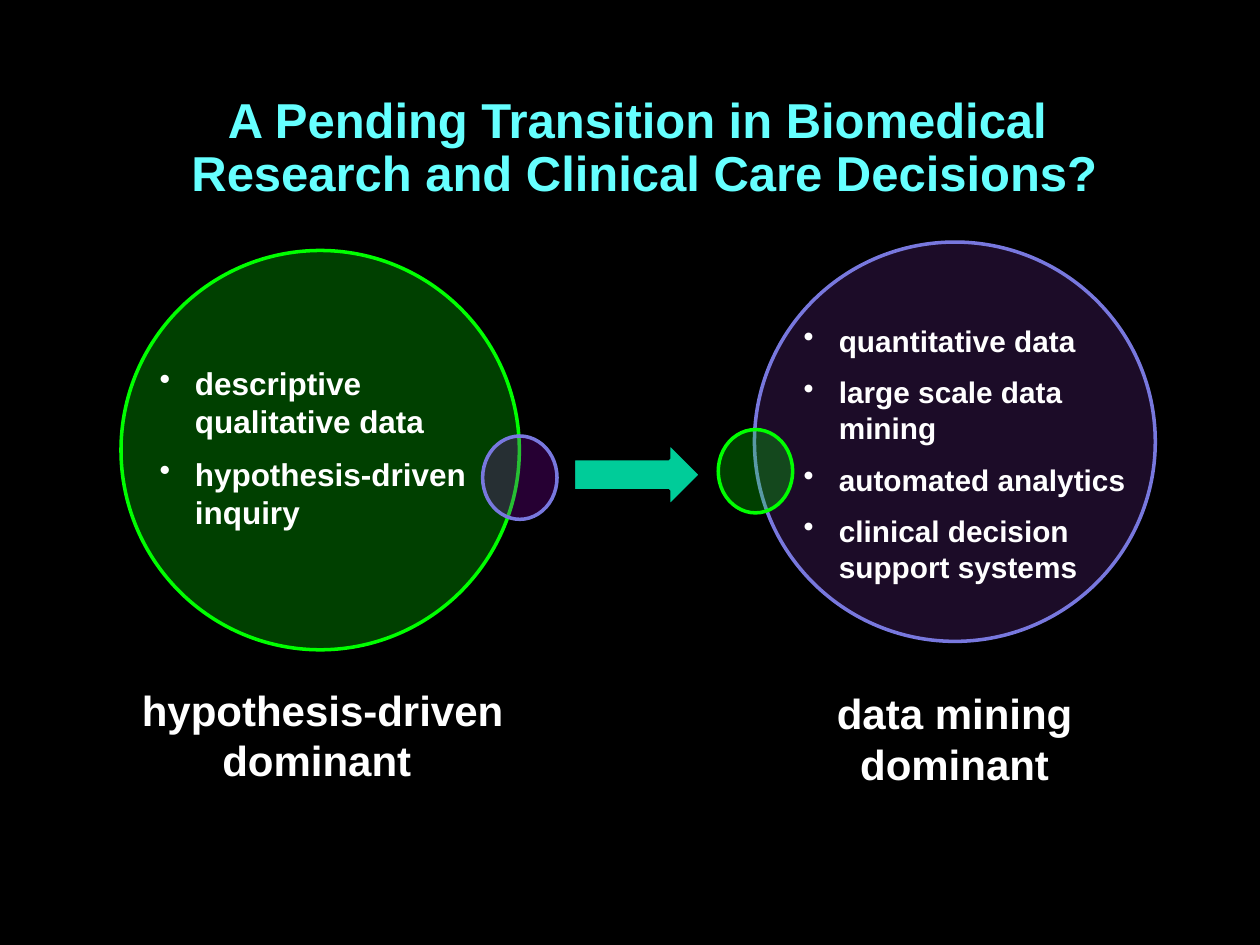
import lxml.etree
import pptx
import pptx.dml.color
import pptx.enum.shapes
import pptx.enum.text
import pptx.oxml.ns
import pptx.util

Cm = pptx.util.Cm
Pt = pptx.util.Pt
SHAPES = pptx.enum.shapes.MSO_SHAPE
CENTER = pptx.enum.text.PP_ALIGN.CENTER

GREEN = "00FF00"
LAVENDER = "7878DE"
WHITE = "FFFFFF"


def rgb(value):
    return pptx.dml.color.RGBColor.from_string(value)


def shift(box, offset):
    left, top, width, height = offset
    return box[0] + left, box[1] + top, width, height


def set_font(para, size, color):
    para.font.name = "Arial"
    para.font.size = Pt(size)
    para.font.bold = True
    para.font.color.rgb = rgb(color)


def add_figure(page, kind, box, fill, line, opacity=100):
    figure = page.shapes.add_shape(kind, *map(Cm, box))
    figure.shadow.inherit = False
    figure.fill.solid()
    figure.fill.fore_color.rgb = rgb(fill)
    figure.line.color.rgb = rgb(line)
    figure.line.width = Pt(2)
    if opacity < 100:
        tint = figure.fill._xPr.find(".//" + pptx.oxml.ns.qn("a:srgbClr"))
        alpha = lxml.etree.SubElement(tint, pptx.oxml.ns.qn("a:alpha"))
        alpha.set("val", str(opacity * 1000))


def add_text(page, box, lines, size, wrap):
    frame = page.shapes.add_textbox(*map(Cm, box)).text_frame
    frame.word_wrap = wrap
    frame.auto_size = pptx.enum.text.MSO_AUTO_SIZE.SHAPE_TO_FIT_TEXT
    frame.text = "\n".join(lines)
    return frame.paragraphs


def add_bullets(page, box, lines, size):
    for index, para in enumerate(add_text(page, box, lines, size, True)):
        properties = para._p.get_or_add_pPr()
        properties.set("marL", str(Cm(0.71)))
        properties.set("indent", str(-Cm(0.71)))
        bullet = lxml.etree.SubElement(properties, pptx.oxml.ns.qn("a:buChar"))
        bullet.set("char", "•")
        if index:
            para.space_before = Pt(4.5)
        para.space_after = Pt(4.5)
        set_font(para, size, WHITE)


def add_caption(page, box, lines):
    for para in add_text(page, box, lines, 24, False):
        para.alignment = CENTER
        set_font(para, 24, WHITE)


def add_title(page, box):
    title = page.shapes.title
    title.left, title.top, title.width, title.height = map(Cm, box)
    frame = title.text_frame
    frame.margin_left = frame.margin_top = frame.margin_right = frame.margin_bottom = 0
    frame.vertical_anchor = pptx.enum.text.MSO_ANCHOR.TOP
    frame.auto_size = pptx.enum.text.MSO_AUTO_SIZE.NONE
    frame.text = "A Pending Transition in Biomedical\v Research and Clinical Care Decisions?"
    para = frame.paragraphs[0]
    para.alignment = CENTER
    para.line_spacing = 0.9
    set_font(para, 28, "66FFFF")


def add_approach(page, box, colors, bullets, caption, minor):
    fill, line = colors
    add_figure(page, SHAPES.OVAL, box, fill, line, 25)
    offset, lines, size = bullets
    add_bullets(page, shift(box, offset), lines, size)
    offset, fill, line = minor
    add_figure(page, SHAPES.OVAL, shift(box, offset), fill, line, 25)
    offset, lines = caption
    add_caption(page, shift(box, offset), lines)


def main():
    deck = pptx.Presentation()
    deck.slide_width = Cm(25.4)
    deck.slide_height = Cm(19.05)
    page = deck.slides.add_slide(deck.slide_layouts.get_by_name("Title Only"))
    page.background.fill.solid()
    page.background.fill.fore_color.rgb = rgb("000000")

    add_title(page, (0.66, 1.93, 24.38, 1.68))
    add_approach(
        page, (2.44, 5.05, 8.03, 8.05), (GREEN, GREEN),
        bullets=((0.53, 2.16, 7.06, 3.68),
                 ["descriptive qualitative data", "hypothesis-driven inquiry"], 18),
        caption=((0.13, 8.62, 7.87, 2.31), ["hypothesis-driven", "dominant "]),
        minor=((7.29, 3.74, 1.5, 1.68), "9900CC", LAVENDER),
    )
    add_figure(page, SHAPES.RIGHT_ARROW, (11.56, 8.92, 2.57, 1.3), "00CC99", "000000")
    add_approach(
        page, (15.21, 4.88, 8.08, 8.05), ("7030A0", LAVENDER),
        bullets=((0.74, 1.5, 7.11, 5.69),
                 ["quantitative data", "large scale data mining",
                  "automated analytics", "clinical decision support systems"], 17),
        caption=((0.54, 8.86, 6.99, 2.31), ["data mining", "dominant"]),
        minor=((-0.73, 3.78, 1.5, 1.68), GREEN, GREEN),
    )
    deck.save("out.pptx")


if __name__ == "__main__":
    main()
